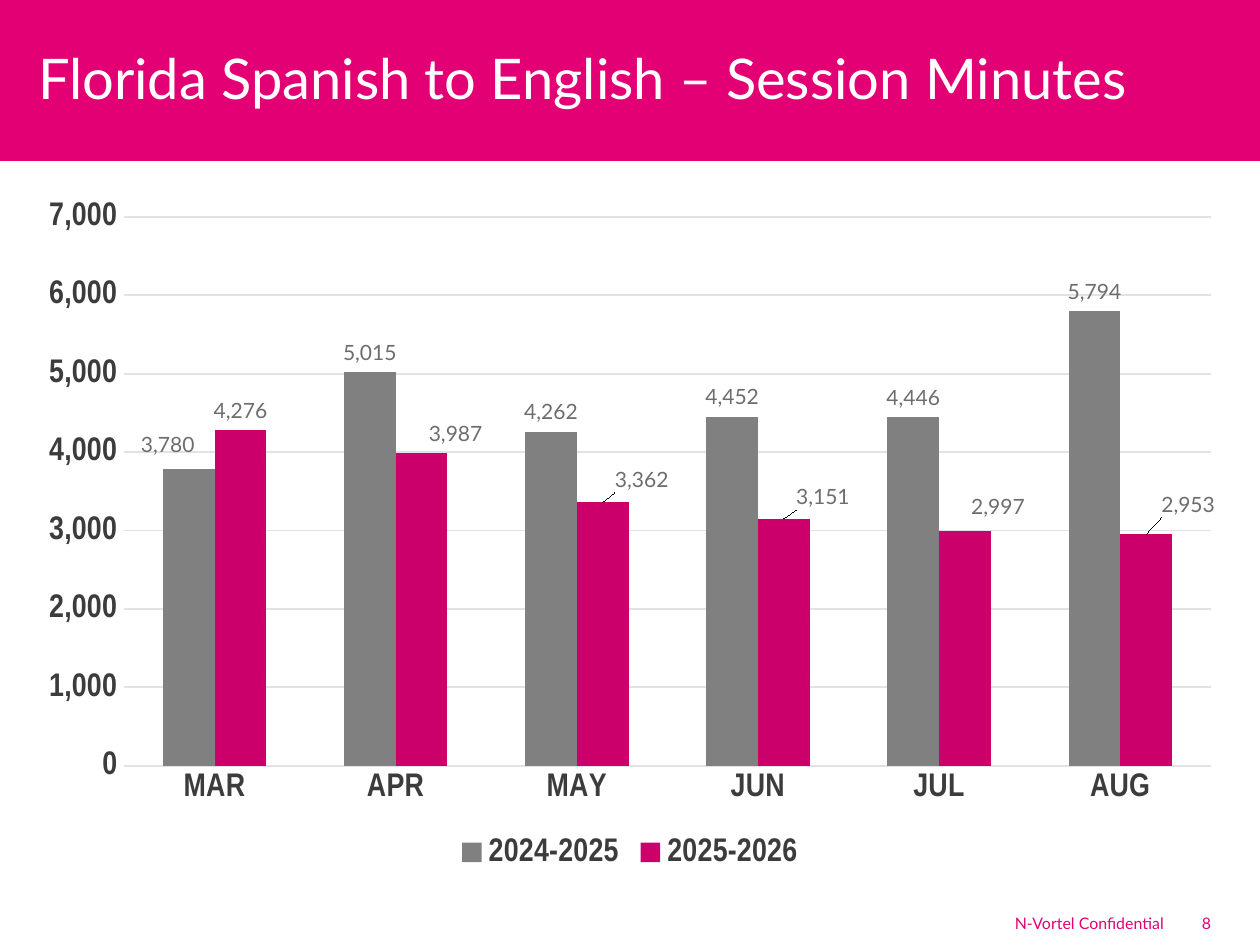
import pptx
import pptx.chart.data
import pptx.dml.color
import pptx.enum.chart
import pptx.enum.shapes
import pptx.enum.text
import pptx.oxml
import pptx.oxml.ns
import pptx.util

EMU_PER_PX = 914400 / 168
COLORS = {
    "magenta": "E20074",
    "white": "FFFFFF",
    "text": "3C3C3C",
    "label": "6D6D6D",
    "grid": "E2E2E2",
    "previous": "808080",
    "current": "CC006A",
}
BODY_FONT = "Lato"
AXIS_FONT = "Arial Narrow"
NUMBER_FORMAT = "#,##0"
CHART_NS = pptx.oxml.ns.nsdecls("c")

MONTHS = ["MAR", "APR", "MAY", "JUN", "JUL", "AUG"]
# name, colour, minutes, label shifts in px by month index
SESSION_MINUTES = [
    ("2024-2025", "previous", [3780, 5015, 4262, 4452, 4446, 5794],
     {0: (-21, -5)}),
    ("2025-2026", "current", [4276, 3987, 3362, 3151, 2997, 2953],
     {1: (34, 0), 2: (39, -3), 3: (39, -2), 4: (33, -5), 5: (42, -10)}),
]


def px(length):
    return pptx.util.Emu(round(length * EMU_PER_PX))


def rgb(name):
    return pptx.dml.color.RGBColor.from_string(COLORS[name])


def manual_layout(settings):
    """Return a c:layout element holding the given settings in order."""
    parts = "".join(f'<c:{tag} val="{value}"/>' for tag, value in settings.items())
    return pptx.oxml.parse_xml(
        f"<c:layout {CHART_NS}><c:manualLayout>{parts}</c:manualLayout></c:layout>")


class SlideBuilder:
    def __init__(self, width, height):
        self.deck = pptx.Presentation()
        self.deck.slide_width, self.deck.slide_height = px(width), px(height)
        self.page = self.deck.slides.add_slide(self.deck.slide_layouts[6])

    def style(self, font, size, color, name=BODY_FONT, bold=False):
        font.size = pptx.util.Pt(size)
        font.name = name
        font.bold = bold
        font.color.rgb = rgb(color)

    def band(self, left, top, width, height, color):
        shape = self.page.shapes.add_shape(
            pptx.enum.shapes.MSO_SHAPE.RECTANGLE, *map(px, (left, top, width, height)))
        shape.shadow.inherit = False
        shape.fill.solid()
        shape.fill.fore_color.rgb = rgb(color)
        shape.line.fill.background()

    def text(self, left, top, width, height, words, size, color, inset, align="LEFT"):
        box = self.page.shapes.add_textbox(*map(px, (left, top, width, height)))
        frame = box.text_frame
        frame.word_wrap = True
        frame.vertical_anchor = pptx.enum.text.MSO_ANCHOR.MIDDLE
        frame.margin_left = frame.margin_right = px(inset)
        frame.margin_top = frame.margin_bottom = px(inset // 2)
        para = frame.paragraphs[0]
        para.alignment = pptx.enum.text.PP_ALIGN[align]
        span = para.add_run()
        span.text = words
        self.style(span.font, size, color)

    def column_chart(self, left, top, width, height, plot, categories, rows):
        """Draw clustered columns; plot is the inner plot area in slide px."""
        data = pptx.chart.data.CategoryChartData(number_format=NUMBER_FORMAT)
        data.categories = categories
        for name, _, values, _ in rows:
            data.add_series(name, values)
        chart = self.page.shapes.add_chart(
            pptx.enum.chart.XL_CHART_TYPE.COLUMN_CLUSTERED,
            *map(px, (left, top, width, height)), data).chart
        chart.has_title = False
        self.style(chart.font, 10, "text")
        chart.has_legend = True
        chart.legend.position = pptx.enum.chart.XL_LEGEND_POSITION.BOTTOM
        chart.legend.include_in_layout = False
        self.style(chart.legend.font, 14, "text", AXIS_FONT, True)
        self.axes(chart)

        columns = chart.plots[0]
        columns.gap_width = 150
        columns.overlap = 0
        columns.vary_by_categories = False
        for series, (_, color, _, shifts) in zip(columns.series, rows):
            series.format.fill.solid()
            series.format.fill.fore_color.rgb = rgb(color)
            series.invert_if_negative = False
            self.value_labels(series, shifts, width, height)

        plot_left, plot_top, plot_width, plot_height = plot
        area = chart.element.find(".//" + pptx.oxml.ns.qn("c:plotArea"))
        for old in area.findall(pptx.oxml.ns.qn("c:layout")):
            area.remove(old)
        area.insert(0, manual_layout({
            "layoutTarget": "inner", "xMode": "edge", "yMode": "edge",
            "x": (plot_left - left) / width, "y": (plot_top - top) / height,
            "w": plot_width / width, "h": plot_height / height}))

    def axes(self, chart):
        for axis in (chart.category_axis, chart.value_axis):
            axis.major_tick_mark = pptx.enum.chart.XL_TICK_MARK.NONE
            axis.minor_tick_mark = pptx.enum.chart.XL_TICK_MARK.NONE
            axis.format.line.fill.background()
            self.style(axis.tick_labels.font, 14, "text", AXIS_FONT, True)
        scale = chart.value_axis
        scale.minimum_scale, scale.maximum_scale, scale.major_unit = 0, 7000, 1000
        scale.tick_labels.number_format = NUMBER_FORMAT
        scale.tick_labels.number_format_is_linked = False
        scale.has_major_gridlines = True
        scale.major_gridlines.format.line.color.rgb = rgb("grid")
        scale.major_gridlines.format.line.width = pptx.util.Pt(0.75)

    def value_labels(self, series, shifts, width, height):
        """Label every column, moving the labels listed in shifts."""
        outside = pptx.enum.chart.XL_LABEL_POSITION.OUTSIDE_END
        labels = series.data_labels
        labels.show_value = True
        labels.number_format = NUMBER_FORMAT
        labels.number_format_is_linked = False
        labels.position = outside
        self.style(labels.font, 9, "label")
        for index, (right, down) in shifts.items():
            label = series.points[index].data_label
            self.style(label.font, 9, "label")
            label.position = outside
        for moved in series.data_labels._element.findall(pptx.oxml.ns.qn("c:dLbl")):
            key = moved.find(pptx.oxml.ns.qn("c:idx"))
            right, down = shifts[int(key.get("val"))]
            key.addnext(pptx.oxml.parse_xml(
                f'<c:numFmt {CHART_NS} formatCode="{NUMBER_FORMAT}" sourceLinked="0"/>'))
            key.addnext(manual_layout({"x": right / width, "y": down / height}))


def main():
    slide = SlideBuilder(1260, 945)
    slide.band(0, 0, 1260, 161, "magenta")
    slide.text(25, 27, 1216, 101, "Florida Spanish to English – Session Minutes",
               24, "white", 13)
    slide.column_chart(25, 188, 1210, 687, (124, 217, 1087, 549),
                       MONTHS, SESSION_MINUTES)
    slide.text(774, 909, 400, 28, "N-Vortel Confidential", 6.8, "magenta", 10, "RIGHT")
    slide.text(1192, 909, 64, 28, "8", 6.8, "magenta", 10)
    slide.deck.save("out.pptx")


if __name__ == "__main__":
    main()
